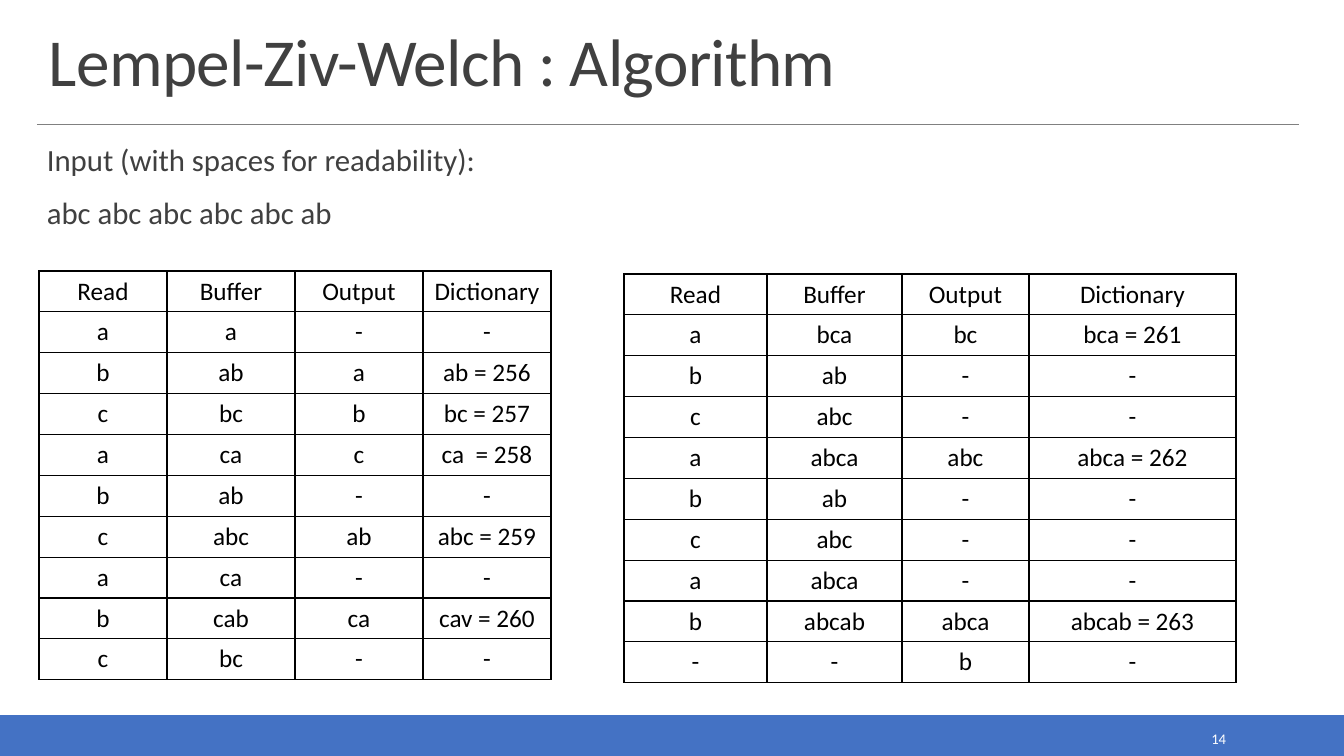
import pptx
import pptx.dml.color
import pptx.enum.shapes
import pptx.enum.text
import pptx.oxml
import pptx.oxml.ns
import pptx.util

EMU_PER_PX = 12192000 / 1344
ALIGN = pptx.enum.text.PP_ALIGN
ANCHOR = pptx.enum.text.MSO_ANCHOR

FIRST_STEPS = """Read|Buffer|Output|Dictionary
a|a|-|-
b|ab|a|ab = 256
c|bc|b|bc = 257
a|ca|c|ca  = 258
b|ab|-|-
c|abc|ab|abc = 259
a|ca|-|-
b|cab|ca|cav = 260
c|bc|-|-"""

LAST_STEPS = """Read|Buffer|Output|Dictionary
a|bca|bc|bca = 261
b|ab|-|-
c|abc|-|-
a|abca|abc|abca = 262
b|ab|-|-
c|abc|-|-
a|abca|-|-
b|abcab|abca|abcab = 263
-|-|b|-"""


def px(length):
    return pptx.util.Emu(round(length * EMU_PER_PX))


def color(hex_value):
    return pptx.dml.color.RGBColor.from_string(hex_value)


def set_values(target, values):
    for attribute, value in values.items():
        setattr(target, attribute, value)


def write_paragraph(paragraph, text, size, hex_value, layout):
    run = paragraph.add_run()
    run.text = text
    set_values(run.font, {"size": pptx.util.Pt(size), "name": "Calibri"})
    run.font.color.rgb = color(hex_value)
    set_values(paragraph, layout)
    return run


def add_text(slide, box, lines, size, hex_value, anchor, layout):
    frame = slide.shapes.add_textbox(*map(px, box)).text_frame
    set_values(frame, {"word_wrap": True, "vertical_anchor": anchor})
    runs = []
    for index, line in enumerate(lines):
        paragraph = frame.add_paragraph() if index else frame.paragraphs[0]
        runs.append(write_paragraph(paragraph, line, size, hex_value, layout))
    return runs


def add_footer(slide, box, page):
    left, top, width, height = box
    band = slide.shapes.add_shape(pptx.enum.shapes.MSO_SHAPE.RECTANGLE, *map(px, box))
    band.shadow.inherit = False
    band.fill.solid()
    band.fill.fore_color.rgb = color("4472C4")
    band.line.color.rgb = color("4472C4")
    band.line.width = pptx.util.Pt(1.25)
    page_box = (left + width - 252, top + 9, 144, 28)
    add_text(slide, page_box, [page], 10.5, "FFFFFF", ANCHOR.MIDDLE, {"alignment": ALIGN.RIGHT})


def add_heading(slide, box, title):
    left, top, width, height = box
    rule_y = top + height
    rule = slide.shapes.add_connector(
        pptx.enum.shapes.MSO_CONNECTOR.STRAIGHT,
        px(left), px(rule_y), px(left + width), px(rule_y))
    rule.line.color.rgb = color("808080")
    rule.line.width = pptx.util.Pt(0.5)
    rule._element.spPr.append(pptx.oxml.parse_xml(
        f"<a:effectLst {pptx.oxml.ns.nsdecls('a')}/>"))
    title_box = (left + 2, top, width, height - 19)
    title_run, = add_text(slide, title_box, [title], 48, "404040", ANCHOR.BOTTOM,
                          {"line_spacing": 0.85})
    title_run.font._element.set("spc", "-50")


def add_input(slide, box, lines):
    add_text(slide, box, lines, 22, "404040", ANCHOR.TOP, {
        "line_spacing": 0.9,
        "space_before": pptx.util.Pt(12),
        "space_after": pptx.util.Pt(2),
    })


def border_cell(cell):
    properties = cell._tc.get_or_add_tcPr()
    for index, side in enumerate(("lnL", "lnR", "lnT", "lnB")):
        properties.insert(index, pptx.oxml.parse_xml(
            f'<a:{side} {pptx.oxml.ns.nsdecls("a")} w="12700"><a:solidFill>'
            f'<a:srgbClr val="000000"/></a:solidFill></a:{side}>'))


def add_steps(slide, box, column_widths, steps):
    rows = [line.split("|") for line in steps.splitlines()]
    left, top, width, height = box
    table = slide.shapes.add_table(len(rows), len(column_widths), *map(px, box)).table
    set_values(table, {"first_row": False, "horz_banding": False})
    for column, column_width in zip(table.columns, column_widths):
        column.width = px(column_width)
    for row_index, row in enumerate(rows):
        table.rows[row_index].height = px(height / len(rows))
        for column_index, entry in enumerate(row):
            cell = table.cell(row_index, column_index)
            cell.fill.background()
            border_cell(cell)
            write_paragraph(cell.text_frame.paragraphs[0], entry, 18, "000000",
                            {"alignment": ALIGN.CENTER})


def main():
    presentation = pptx.Presentation()
    set_values(presentation, {"slide_width": px(1344), "slide_height": px(756)})
    slide = presentation.slides.add_slide(presentation.slide_layouts[6])
    add_footer(slide, (0, 716, 1344, 40), "14")
    add_heading(slide, (37, 20, 1262, 104), "Lempel-Ziv-Welch : Algorithm")
    add_steps(slide, (39, 271, 512, 409), [128] * 4, FIRST_STEPS)
    add_input(slide, (37, 140, 1262, 103),
              ["Input (with spaces for readability):", "abc abc abc abc abc ab"])
    add_steps(slide, (624, 274, 612, 409), [143, 135, 127, 207], LAST_STEPS)
    presentation.save("out.pptx")


if __name__ == "__main__":
    main()
